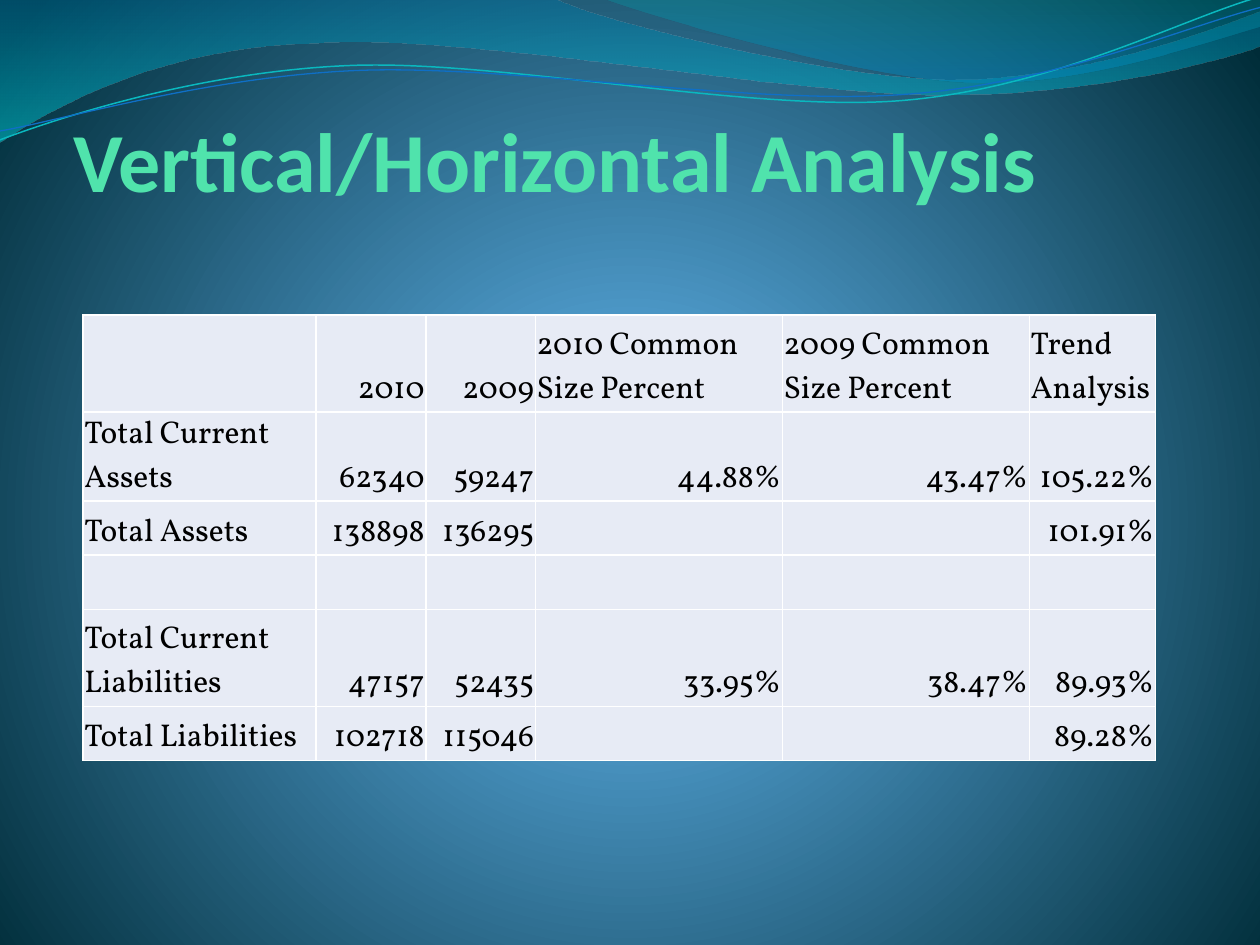
from math import cos, radians, sin

from pptx import Presentation
from pptx.dml.color import RGBColor as RGB
from pptx.enum.text import MSO_ANCHOR as ANCHOR, MSO_AUTO_SIZE as AUTO, PP_ALIGN as ALIGN
from pptx.oxml import parse_xml
from pptx.oxml.ns import qn
from pptx.util import Inches, Pt

COLORS = {"title": "50E3AC", "text": "000000", "cell": "E7EBF5", "border": "FFFFFF",
          "teal_line": "0AB8BF", "blue_line": "0F6FC6"}
NS = 'xmlns:a="http://schemas.openxmlformats.org/drawingml/2006/main"'
DOWN = '<a:lin ang="5400000" scaled="0"/>'
GLOW = ('<a:path path="circle"><a:fillToRect l="10000" t="110000" r="10000" b="100000"/>'
        '</a:path>')

BACKGROUND = [(0, "4AA0D6", 100), (25, "4C98C7", 100), (100, "002C38", 100)]
WAVES = [
    ([(0, 0), (4.4, -0.01), (4.76, 0.17, 6.64, 0.63, 7.58, 0.63),
      (8.53, 0.63, 9.58, 0.26, 10, 0.09), (10.01, 0.36),
      (9.83, 0.44, 8.7, 0.76, 7.46, 0.75), (6.22, 0.75, 3.82, 0.28, 2.57, 0.34),
      (1.29, 0.36, 0.46, 0.83, -0.01, 1.13)],
     [(0, "0074A1", 45), (100, "00C6CF", 55)]),
    ([(4.79, -0.01), (5.09, 0.11, 6.82, 0.62, 7.69, 0.65),
      (8.56, 0.69, 9.61, 0.32, 10, 0.21), (10, 0)],
     [(0, "00A1A9", 30), (80, "008BBF", 45)]),
]
TILT = -2.7
RIBBONS = [
    ([(0, 1.11), (0.48, 0.93, 1.58, 0.57, 2.77, 0.52),
      (3.95, 0.47, 5.93, 0.89, 7.13, 0.8), (8.33, 0.71, 9.38, 0.15, 9.98, -0.02)],
     (4.99, 0.58), "teal_line", 0.85),
    ([(0, 1.04), (0.47, 0.96, 1.64, 0.61, 2.83, 0.56),
      (4.03, 0.51, 5.97, 0.84, 7.17, 0.75), (8.36, 0.67, 9.41, 0.21, 10, 0.06)],
     (5, 0.59), "blue_line", 0.75),
]
COLS = [1.85, 0.87, 0.87, 1.96, 1.96, 1]
ROWS = [0.77, 0.43, 0.43, 0.43, 0.77, 0.43]
DATA = [
    ["", "2010", "2009", "2010 Common Size Percent", "2009 Common Size Percent",
     "Trend Analysis"],
    ["Total Current Assets", "62340", "59247", "44.88%", "43.47%", "105.22%"],
    ["Total Assets", "138898", "136295", "", "", "101.91%"],
    [""] * 6,
    ["Total Current Liabilities", "47157", "52435", "33.95%", "38.47%", "89.93%"],
    ["Total Liabilities", "102718", "115046", "", "", "89.28%"],
]


def gradient(stops, direction):
    """Return a gradient fill element from (position, colour, opacity) stops."""
    gs = "".join(f'<a:gs pos="{pos * 1000}"><a:srgbClr val="{color}">'
                 f'<a:alpha val="{alpha * 1000}"/></a:srgbClr></a:gs>'
                 for pos, color, alpha in stops)
    return parse_xml(f'<a:gradFill {NS} rotWithShape="1"><a:gsLst>{gs}</a:gsLst>'
                     f'{direction}</a:gradFill>')


def level(step, center, angle):
    """Turn the points of a step back by an angle around a center."""
    (cx, cy), a = center, radians(-angle)
    points = [(x - cx, y - cy) for x, y in zip(step[::2], step[1::2])]
    return [v for x, y in points
            for v in (cx + x * cos(a) - y * sin(a), cy + x * sin(a) + y * cos(a))]


class Deck:
    """Hold the style and current slide, measured on a 10 by 7.5 grid."""

    def __init__(self):
        """Start a presentation with one title-only slide."""
        self.prs = Presentation()
        self.prs.slide_width, self.prs.slide_height = Inches(10), Inches(7.5)
        self.unit = self.prs.slide_width / 10
        self.s = self.prs.slides.add_slide(self.prs.slide_layouts[5])

    def grid(self, *lengths):
        """Turn grid lengths into slide lengths."""
        return [round(v * self.unit) for v in lengths]

    def font(self, p, name, size, color, bold=False):
        """Format every run of a paragraph."""
        for r in p.runs:
            r.font.name, r.font.size, r.font.bold = name, Pt(size), bold
            r.font.color.rgb = RGB.from_string(COLORS[color])

    def background(self, stops):
        """Fill the slide background with a round glow."""
        self.s.background.fill.solid()
        bg = self.s.element.cSld.find(qn("p:bg")).find(qn("p:bgPr"))
        bg.replace(bg[0], gradient(stops, GLOW))

    def outline(self, steps, close):
        """Draw an outline whose six-number steps are cubic curves."""
        points = [self.grid(*step[i:i + 2]) for step in steps
                  for i in range(0, len(step), 2)]
        builder = self.s.shapes.build_freeform(*points[0])
        builder.add_line_segments(points[1:], close=close)
        sp = builder.convert_to_shape()
        sp.shadow.inherit = False
        lines = iter(list(sp.element.iter(qn("a:lnTo"))))
        for step in steps[1:]:
            first = next(lines)
            if len(step) == 6:
                curve = parse_xml(f"<a:cubicBezTo {NS}/>")
                first.addprevious(curve)
                for line in (first, next(lines), next(lines)):
                    curve.append(line[0])
                    line.getparent().remove(line)
        return sp

    def wave(self, steps, stops):
        """Draw a translucent closed wave."""
        sp = self.outline(steps, True)
        sp.line.fill.background()
        sp.fill.solid()
        props = sp.element.spPr
        props.replace(props.find(qn("a:solidFill")), gradient(stops, DOWN))

    def ribbon(self, steps, center, color, width):
        """Draw a thin open curve, tilted around its center."""
        sp = self.outline([level(step, center, TILT) for step in steps], False)
        sp.rotation = TILT
        sp.fill.background()
        sp.line.color.rgb = RGB.from_string(COLORS[color])
        sp.line.width = Pt(width)

    def title(self, text, *box):
        """Place the title in front of the waves."""
        sp = self.s.shapes.title
        sp.left, sp.top, sp.width, sp.height = self.grid(*box)
        self.s.shapes.element.append(sp.element)
        tf = sp.text_frame
        tf.text = text
        tf.auto_size, tf.word_wrap, tf.vertical_anchor = AUTO.NONE, True, ANCHOR.BOTTOM
        tf.margin_left = tf.margin_right = tf.margin_top = tf.margin_bottom = 0
        p = tf.paragraphs[0]
        p.alignment = ALIGN.LEFT
        self.font(p, "Calibri", 48, "title", True)

    def cell(self, cell, text, align):
        """Fill, border and write one table cell."""
        for side in "LRTB":
            cell._tc.get_or_add_tcPr().append(parse_xml(
                f'<a:ln{side} {NS} w="12700"><a:solidFill><a:srgbClr '
                f'val="{COLORS["border"]}"/></a:solidFill></a:ln{side}>'))
        cell.fill.solid()
        cell.fill.fore_color.rgb = RGB.from_string(COLORS["cell"])
        cell.margin_left = cell.margin_right = cell.margin_top = Inches(0.01)
        cell.margin_bottom = 0
        cell.vertical_anchor = ANCHOR.BOTTOM
        if text:
            cell.text = text
            p = cell.text_frame.paragraphs[0]
            p.alignment = align
            self.font(p, "Vollkorn", 18, "text")

    def table(self, data, left, top, cols, rows):
        """Add a table with numbers to the right and labels to the left."""
        box = self.grid(left, top, sum(cols), sum(rows))
        table = self.s.shapes.add_table(len(rows), len(cols), *box).table
        table.first_row = table.horz_banding = False
        for col, width in zip(table.columns, self.grid(*cols)):
            col.width = width
        for row, height, texts in zip(table.rows, self.grid(*rows), data):
            row.height = height
            for cell, text in zip(row.cells, texts):
                number = text.rstrip("%").replace(".", "").isdigit()
                self.cell(cell, text, ALIGN.RIGHT if number else ALIGN.LEFT)


def main():
    """Build and save the slide."""
    deck = Deck()
    deck.background(BACKGROUND)
    for wave in WAVES:
        deck.wave(*wave)
    for ribbon in RIBBONS:
        deck.ribbon(*ribbon)
    deck.title("Vertical/Horizontal Analysis", 0.58, 0.17, 8.5, 1.49)
    deck.table(DATA, 0.66, 2.5, COLS, ROWS)
    deck.prs.save("out.pptx")


if __name__ == "__main__":
    main()
